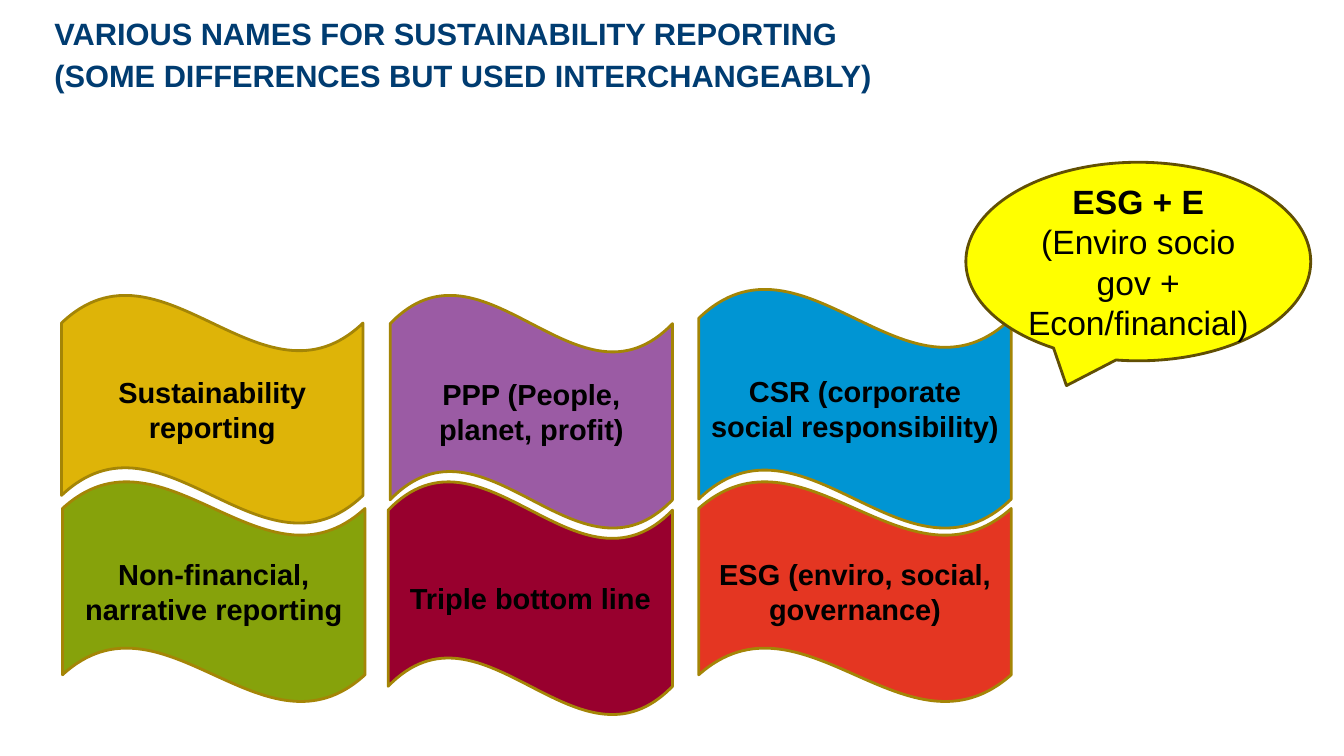
from pptx import Presentation
from pptx.dml.color import RGBColor
from pptx.enum.shapes import MSO_SHAPE as SHAPE
from pptx.enum.text import MSO_ANCHOR as ANCHOR, PP_ALIGN as ALIGN
from pptx.util import Inches, Pt

NAVY = RGBColor(0x00, 0x3C, 0x71)
BLACK = RGBColor(0x00, 0x00, 0x00)
GOLD = RGBColor(0xDE, 0xB4, 0x08)
GREEN = RGBColor(0x86, 0xA2, 0x0B)
PURPLE = RGBColor(0x9B, 0x5B, 0xA4)
MAROON = RGBColor(0x98, 0x00, 0x2E)
BLUE = RGBColor(0x00, 0x95, 0xD3)
RED = RGBColor(0xE4, 0x36, 0x22)
YELLOW = RGBColor(0xFF, 0xFF, 0x00)
WAVE_LINE = RGBColor(0xA4, 0x85, 0x06)
CALLOUT_LINE = RGBColor(0x61, 0x4F, 0x04)

TITLE_LINES = [
    "VARIOUS NAMES FOR SUSTAINABILITY REPORTING",
    "(SOME DIFFERENCES BUT USED INTERCHANGEABLY)",
]

# Each wave: text, fill, (left, top, width, height)
WAVES = [
    ("Sustainability reporting", GOLD, (0.61, 2.92, 2.99, 2.28)),
    ("Non-financial, narrative reporting", GREEN, (0.62, 4.77, 3, 2.2)),
    ("PPP (People, planet, profit)", PURPLE, (3.87, 2.92, 2.8, 2.33)),
    ("Triple bottom line", MAROON, (3.85, 4.77, 2.82, 2.33)),
    ("CSR (corporate social responsibility)", BLUE, (6.93, 2.86, 3.1, 2.39)),
    ("ESG (enviro, social, governance)", RED, (6.93, 4.77, 3.1, 2.2)),
]


def add_run(p, text, size, color, bold=True):
    r = p.add_run()
    r.text = text
    font = {"name": "Arial", "size": Pt(size), "bold": bold}
    for name, value in font.items():
        setattr(r.font, name, value)
    r.font.color.rgb = color


def format_paragraph(p, **values):
    for name, value in values.items():
        setattr(p, name, value)


def add_title(s):
    title = s.shapes.title
    place = {"left": 0.44, "top": 0.13, "width": 10.87, "height": 0.86}
    for name, value in place.items():
        setattr(title, name, Inches(value))
    tf = title.text_frame
    tf.word_wrap = True
    tf.vertical_anchor = ANCHOR.MIDDLE
    for i, line in enumerate(TITLE_LINES):
        p = tf.add_paragraph() if i else tf.paragraphs[0]
        format_paragraph(p, alignment=ALIGN.LEFT, line_spacing=0.9,
                         space_before=Pt(0), space_after=Pt(6))
        add_run(p, line, 22, NAVY)


def add_filled_shape(s, kind, box, fill, line):
    """Add an outlined shape and return its centred first paragraph."""
    sp = s.shapes.add_shape(kind, *map(Inches, box))
    sp.shadow.inherit = False
    sp.fill.solid()
    sp.fill.fore_color.rgb = fill
    sp.line.color.rgb = line
    sp.line.width = Pt(2)
    tf = sp.text_frame
    tf.word_wrap = True
    tf.vertical_anchor = ANCHOR.MIDDLE
    p = tf.paragraphs[0]
    p.alignment = ALIGN.CENTER
    return p


def add_wave(s, text, fill, box):
    p = add_filled_shape(s, SHAPE.WAVE, box, fill, WAVE_LINE)
    p.space_after = Pt(6)
    add_run(p, text, 20.7, BLACK)


def add_callout(s):
    p = add_filled_shape(s, SHAPE.OVAL_CALLOUT, (9.58, 1.61, 3.42, 1.97),
                         YELLOW, CALLOUT_LINE)
    add_run(p, "ESG + E ", 24, BLACK)
    add_run(p, "(Enviro socio gov + Econ/financial)", 24, BLACK, bold=False)


def main():
    prs = Presentation()
    prs.slide_width = Inches(13.33)
    prs.slide_height = Inches(7.5)
    s = prs.slides.add_slide(prs.slide_layouts[5])

    # Heading
    add_title(s)

    # Waves, column by column
    for text, fill, box in WAVES:
        add_wave(s, text, fill, box)

    # Callout over the last column
    add_callout(s)

    prs.save("out.pptx")


if __name__ == "__main__":
    main()
